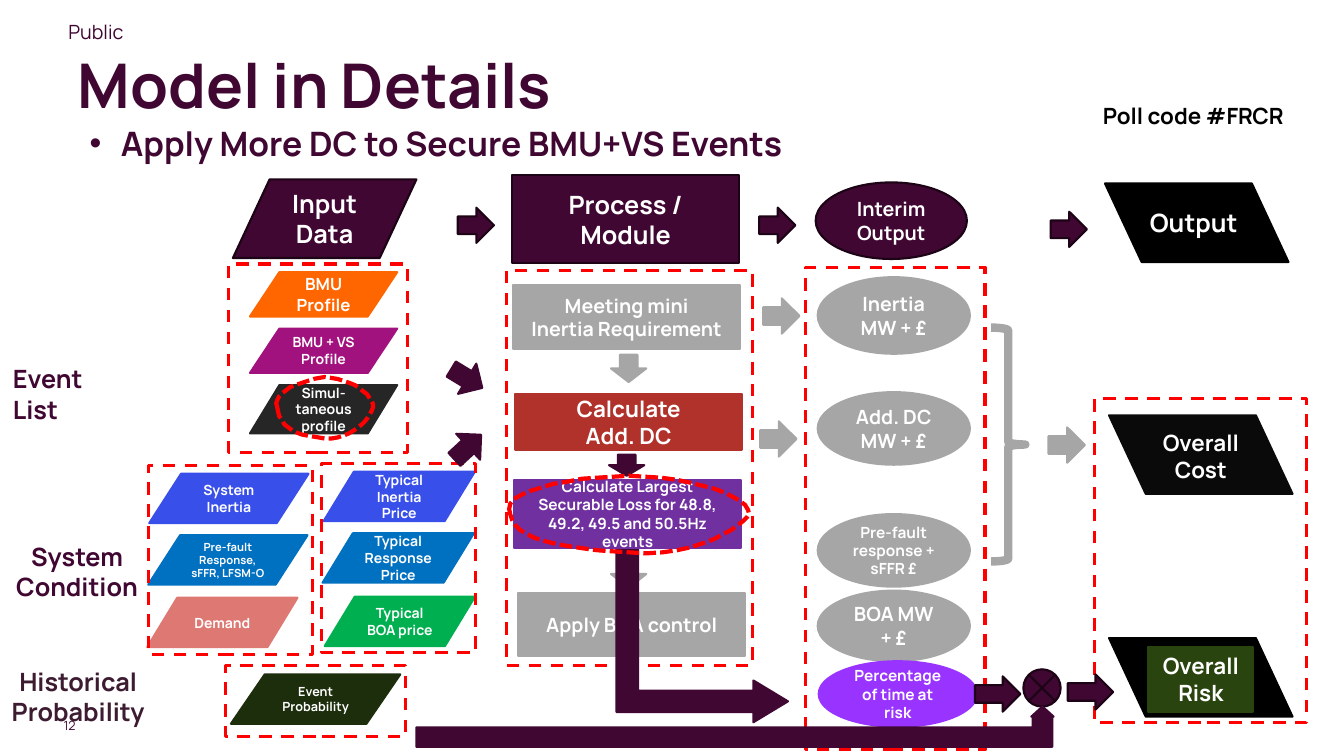
from pptx import Presentation
from pptx.dml.color import RGBColor
from pptx.enum.dml import MSO_LINE
from pptx.enum.shapes import MSO_SHAPE
from pptx.enum.text import MSO_ANCHOR, PP_ALIGN
from pptx.oxml.ns import qn
from pptx.util import Emu, Pt
from lxml.etree import SubElement

PX = 9144  # 100 px to the inch
FONT = "Manrope"

PLUM = RGBColor(0x3F, 0x07, 0x31)
DARK_PLUM = RGBColor(0x1C, 0x03, 0x15)
BROWN = RGBColor(0x3D, 0x1C, 0x32)
WHITE = RGBColor(0xFF, 0xFF, 0xFF)
BLACK = RGBColor(0x00, 0x00, 0x00)
NEAR_BLACK = RGBColor(0x0A, 0x0A, 0x0A)
CHARCOAL = RGBColor(0x26, 0x26, 0x26)
GREY = RGBColor(0xA6, 0xA6, 0xA6)
RED = RGBColor(0xFF, 0x00, 0x00)
BRICK = RGBColor(0xB0, 0x32, 0x2B)
ORANGE = RGBColor(0xFF, 0x66, 0x00)
MAGENTA = RGBColor(0xA2, 0x12, 0x7E)
SALMON = RGBColor(0xDD, 0x78, 0x73)
BLUE = RGBColor(0x00, 0x70, 0xC0)
INDIGO = RGBColor(0x39, 0x4F, 0xE9)
GREEN = RGBColor(0x00, 0xB0, 0x50)
FOREST = RGBColor(0x1C, 0x2E, 0x0B)
OLIVE = RGBColor(0x2A, 0x44, 0x10)
PURPLE = RGBColor(0x70, 0x30, 0xA0)
VIOLET = RGBColor(0x99, 0x33, 0xFF)

DATA = MSO_SHAPE.FLOWCHART_DATA
BOX = MSO_SHAPE.RECTANGLE
OVAL = MSO_SHAPE.OVAL
ARROW = MSO_SHAPE.RIGHT_ARROW
BENT = MSO_SHAPE.BENT_UP_ARROW
LEFT, CENTER, RIGHT = PP_ALIGN.LEFT, PP_ALIGN.CENTER, PP_ALIGN.RIGHT

# frame (left, top, width, height), lines, size, colour, bold, alignment
LABELS = [
    ((58, 15, 500, 34), ["Public"], 14, PLUM, False, LEFT),
    ((3, 356, 137, 70), ["Event", "List"], 18, PLUM, True, LEFT),
    ((5, 532, 143, 70), ["System", "Condition"], 18, PLUM, True, CENTER),
    ((0, 656, 155, 71), ["Historical", "Probability"], 18, BROWN, True, CENTER),
]
TITLE = ((67, 41, 1150, 84), ["Model in Details"], 44, PLUM, True, LEFT)
SUBTITLE = ((79, 117, 747, 50), ["Apply More DC to Secure BMU+VS Events"], 24, PLUM, True, LEFT)
POLL_CODE = ((1084, 99, 240, 36), ["Poll code #FRCR"], 16, BLACK, True, LEFT)
PAGE_NUMBER = ((57, 712, 18, 15), ["12"], 9, PLUM, False, RIGHT)
OUTPUT_LABELS = [
    ((1125, 201, 118, 40), ["Output"], 18, WHITE, True, CENTER),
    ((1139, 421, 104, 64), ["Overall", "Cost"], 16, WHITE, True, CENTER),
    ((1139, 642, 104, 64), ["Overall", "Risk"], 16, WHITE, True, CENTER),
]

# preset, frame, fill, line, lines, size
HEADERS = [
    (DATA, (231, 178, 182, 78), PLUM, DARK_PLUM, ["Input Data"], 18),
    (BOX, (508, 174, 225, 87), PLUM, DARK_PLUM, ["Process / Module"], 18),
    (OVAL, (809, 181, 150, 76), PLUM, DARK_PLUM, ["Interim Output"], 14),
]
INPUTS = [
    (DATA, (248, 270, 146, 44), ORANGE, ORANGE, ["BMU Profile"], 12),
    (DATA, (248, 326, 146, 44), MAGENTA, MAGENTA, ["BMU + VS Profile"], 10),
    (DATA, (248, 382, 146, 48), CHARCOAL, CHARCOAL, ["Simul-", "taneous profile"], 10),
    (DATA, (148, 470, 158, 49), INDIGO, INDIGO, ["System", "Inertia"], 10),
    (DATA, (147, 531, 158, 49), BLUE, BLUE, ["Pre-fault", "Response, sFFR, LFSM-O"], 8),
    (DATA, (146, 593, 149, 49), SALMON, SALMON, ["Demand"], 10),
    (DATA, (321, 468, 150, 49), INDIGO, INDIGO, ["Typical Inertia Price"], 10),
    (DATA, (320, 529, 150, 49), BLUE, BLUE, ["Typical", "Response Price"], 10),
    (DATA, (322, 592, 149, 49), GREEN, GREEN, ["Typical BOA price"], 10),
    (DATA, (229, 669, 168, 49), FOREST, FOREST, ["Event Probability"], 9),
]
GREY_STEPS = [
    (BOX, (509, 283, 225, 63), GREY, GREY, ["Meeting mini", "Inertia Requirement"], 14),
    (BOX, (514, 588, 225, 63), GREY, GREY, ["Apply BOA control"], 14),
    (OVAL, (811, 275, 151, 76), GREY, GREY, ["Inertia MW + £"], 14),
    (OVAL, (811, 389, 151, 72), GREY, GREY, ["Add. DC", "MW + £"], 14),
    (OVAL, (811, 510, 151, 72), GREY, GREY, ["Pre-fault response + sFFR £"], 11),
    (OVAL, (811, 586, 151, 70), GREY, GREY, ["BOA MW + £"], 14),
]
RISK_SHARE = (OVAL, (812, 656, 157, 65), VIOLET, VIOLET, ["Percentage of time at risk"], 11)
ACTIVE_STEPS = [
    (BOX, (510, 476, 225, 68), PURPLE, PURPLE,
     ["Calculate Largest Securable Loss for 48.8, 49.2, 49.5 and 50.5Hz events"], 11),
    (BOX, (511, 391, 225, 55), BRICK, BRICK, ["Calculate", "Add. DC"], 16),
]
# left, top, fill
OUTPUTS = [(1096, 182, BLACK), (1100, 412, NEAR_BLACK), (1100, 633, BLACK)]
RISK_PLATE = (BOX, (1139, 642, 104, 64), OLIVE, OLIVE)

FRAMES = [
    (227, 262, 177, 187), (147, 462, 163, 187), (319, 460, 153, 187), (224, 660, 178, 71),
    (502, 268, 244, 392), (799, 265, 178, 479), (1086, 395, 210, 322),
]

# preset, frame, fill, line, rotation, adjustments
ARROWS = [
    *[(ARROW, (left, top, 36, 35), PLUM, DARK_PLUM, 0, ())
      for left, top in [(454, 206), (753, 206), (1042, 210)]],
    *[(ARROW, (left, top, 36, 35), GREY, GREY, 0, ())
      for left, top in [(757, 296), (754, 418), (1040, 424)]],
    *[(ARROW, (610, top, 27, 35), GREY, GREY, 90, ()) for top in (348, 552)],
    (BENT, (607, 542, 179, 170), PLUM, PLUM, 90, (0.126, 0.122, 0.202)),
    *[(ARROW, (left, top, 45, 35), PLUM, DARK_PLUM, 0, ())
      for left, top in [(1059, 669), (967, 671)]],
    (MSO_SHAPE.FLOWCHART_SUMMING_JUNCTION, (1015, 664, 37, 37), PLUM, DARK_PLUM, 0, ()),
    (BENT, (413, 701, 632, 40), PLUM, PLUM, 0, (0.484, 0.277, 0.25)),
    (ARROW, (611, 444, 21, 35), PLUM, PLUM, 90, ()),
    (ARROW, (445, 358, 36, 35), PLUM, PLUM, 31.2, ()),
    (ARROW, (446, 426, 36, 35), PLUM, PLUM, 317.3, ()),
]
BRACE = (983, 325, 34, 232)

# start point, then cubic curves (two handles and an end point)
MARKS = [
    ((275, 404), [((270, 388), (300, 378), (322, 374)), ((350, 377), (370, 390), (370, 404)),
                  ((367, 416), (350, 436), (322, 435)), ((296, 433), (277, 425), (275, 404))]),
    ((506, 510), [((494, 489), (560, 473), (624, 472)), ((691, 474), (743, 493), (743, 510)),
                  ((737, 521), (694, 553), (624, 548)), ((559, 545), (508, 535), (506, 510))]),
]
CURVE_STEPS = 12


def emu(frame):
    return [Emu(value * PX) for value in frame]


def write(text_frame, lines, size, color, bold, alignment):
    text_frame.text = "\n".join(lines)
    for paragraph in text_frame.paragraphs:
        paragraph.alignment = alignment
        for run in paragraph.runs:
            run.font.name, run.font.size, run.font.bold = FONT, Pt(size), bold
            run.font.color.rgb = color


def add_label(slide, frame, lines, size, color, bold, alignment, wrap=False):
    text_frame = slide.shapes.add_textbox(*emu(frame)).text_frame
    text_frame.word_wrap = wrap
    write(text_frame, lines, size, color, bold, alignment)
    return text_frame


def style(shape, fill, line, width=1.5, dash=None):
    shape.shadow.inherit = False
    if fill is None:
        shape.fill.background()
    else:
        shape.fill.solid()
        shape.fill.fore_color.rgb = fill
    shape.line.color.rgb = line
    shape.line.width = Pt(width)
    if dash:
        shape.line.dash_style = dash


def add_node(slide, preset, frame, fill, line, lines=(), size=0):
    shape = slide.shapes.add_shape(preset, *emu(frame))
    style(shape, fill, line)
    if lines:
        shape.text_frame.word_wrap = True
        shape.text_frame.vertical_anchor = MSO_ANCHOR.MIDDLE
        write(shape.text_frame, lines, size, WHITE, True, CENTER)
    return shape


def add_mark(slide, start, curves):
    """Draw a closed dashed loop by sampling its cubic curves."""
    points, begin = [], start
    for first, second, end in curves:
        for step in range(1, CURVE_STEPS + 1):
            t = step / CURVE_STEPS
            u = 1 - t
            points.append(tuple(u**3 * a + 3 * u * u * t * b + 3 * u * t * t * c + t**3 * d
                                for a, b, c, d in zip(begin, first, second, end)))
        begin = end
    builder = slide.shapes.build_freeform(*start, scale=PX)
    builder.add_line_segments(points, close=True)
    style(builder.convert_to_shape(), None, RED, 3, MSO_LINE.SQUARE_DOT)


def main():
    presentation = Presentation()
    presentation.slide_width, presentation.slide_height = emu((1333, 750))
    slide = presentation.slides.add_slide(presentation.slide_layouts[6])

    number = add_label(slide, *PAGE_NUMBER)
    number.margin_left = number.margin_right = number.margin_top = number.margin_bottom = 0
    number.vertical_anchor = MSO_ANCHOR.MIDDLE
    add_label(slide, *TITLE, wrap=True).vertical_anchor = MSO_ANCHOR.MIDDLE
    add_label(slide, *POLL_CODE, wrap=True).paragraphs[0].line_spacing = 0.9
    for label in LABELS:
        add_label(slide, *label)
    properties = add_label(slide, *SUBTITLE).paragraphs[0]._p.get_or_add_pPr()
    properties.set("marL", str(31 * PX))
    properties.set("indent", str(-31 * PX))
    SubElement(properties, qn("a:buFont")).set("typeface", "Arial")
    SubElement(properties, qn("a:buChar")).set("char", "•")

    for node in HEADERS + INPUTS + GREY_STEPS:
        add_node(slide, *node)
    for frame in FRAMES:
        style(slide.shapes.add_shape(BOX, *emu(frame)), None, RED, 2.25, MSO_LINE.DASH)
    add_node(slide, *RISK_SHARE)
    for left, top, color in OUTPUTS:
        shape = add_node(slide, DATA, (left, top, 182, 78), color, color)
        shape._element.spPr.find(qn("a:xfrm")).set("flipH", "1")
    add_node(slide, *RISK_PLATE)
    for label in OUTPUT_LABELS:
        add_label(slide, *label)

    style(slide.shapes.add_shape(MSO_SHAPE.RIGHT_BRACE, *emu(BRACE)), None, GREY, 6)
    for preset, frame, fill, line, rotation, adjustments in ARROWS:
        shape = add_node(slide, preset, frame, fill, line)
        shape.rotation = rotation
        for index, value in enumerate(adjustments):
            shape.adjustments[index] = value
    for node in ACTIVE_STEPS:
        add_node(slide, *node)
    for start, curves in MARKS:
        add_mark(slide, start, curves)
    presentation.save("out.pptx")


if __name__ == "__main__":
    main()
